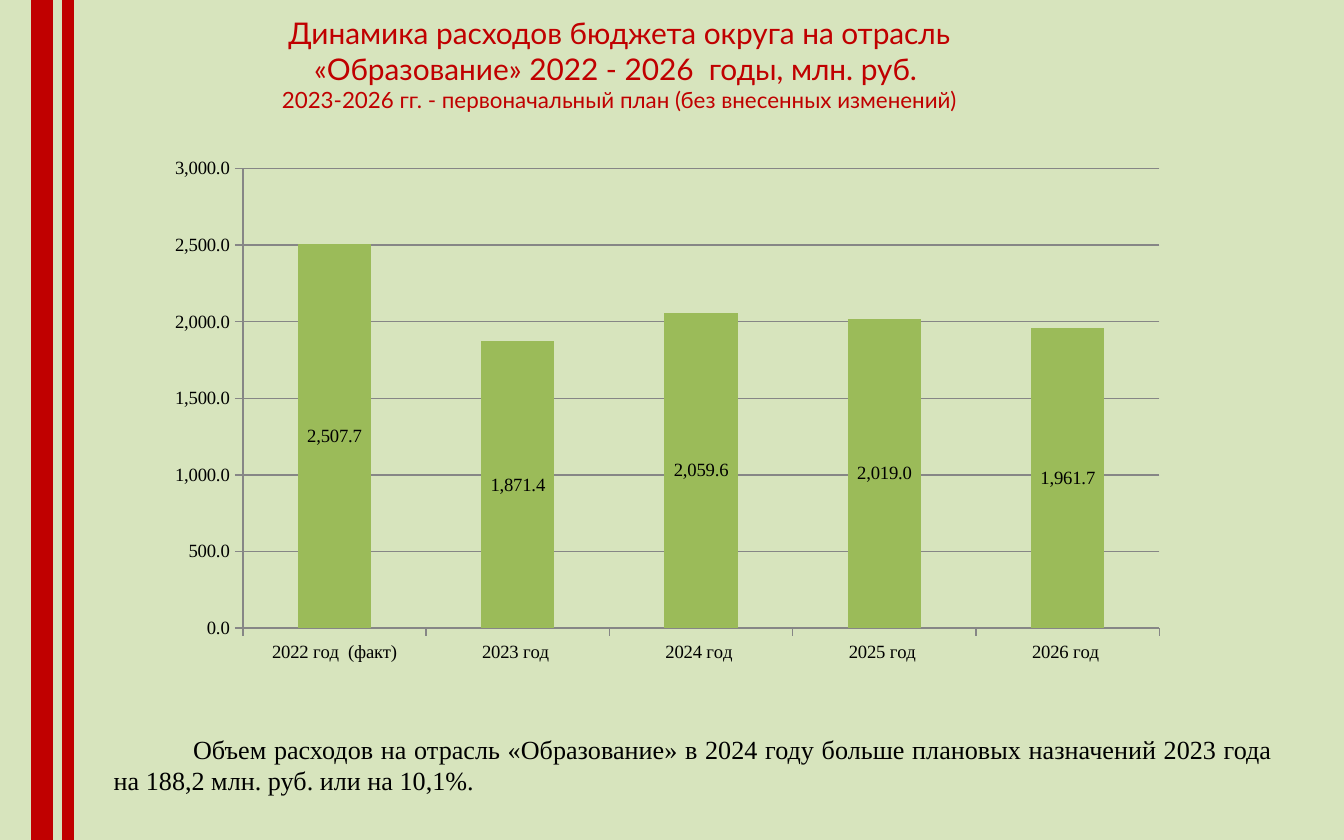
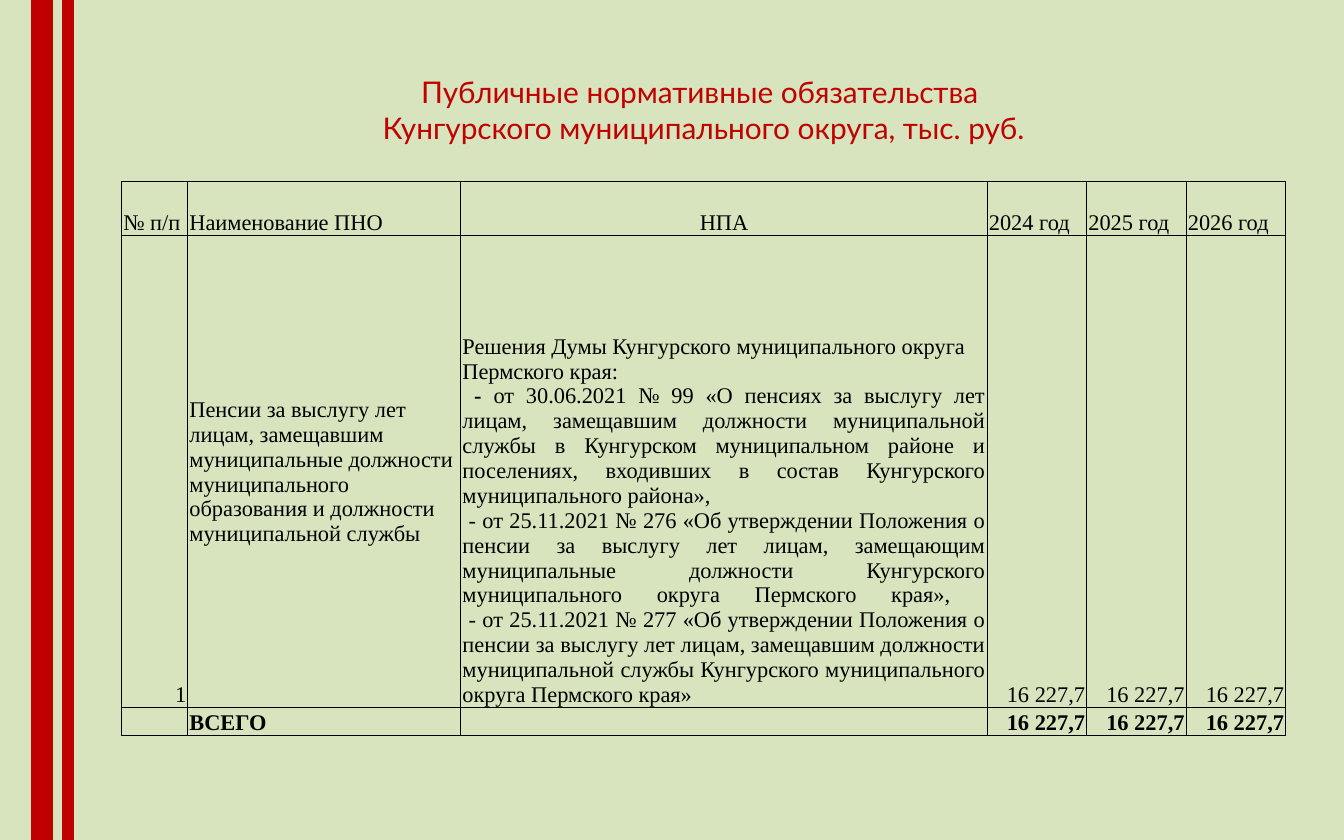
from lxml import etree
from pptx import Presentation
from pptx.chart.data import CategoryChartData
from pptx.dml.color import RGBColor
from pptx.enum.chart import XL_CHART_TYPE, XL_LABEL_POSITION, XL_TICK_MARK
from pptx.enum.shapes import MSO_SHAPE
from pptx.enum.text import MSO_ANCHOR, PP_ALIGN
from pptx.oxml.ns import qn
from pptx.util import Cm, Pt

COLUMN_STACKED = XL_CHART_TYPE.COLUMN_STACKED
LABEL_CENTER = XL_LABEL_POSITION.CENTER
TICK_OUTSIDE = XL_TICK_MARK.OUTSIDE
RECTANGLE = MSO_SHAPE.RECTANGLE
TOP, MIDDLE, BOTTOM = MSO_ANCHOR.TOP, MSO_ANCHOR.MIDDLE, MSO_ANCHOR.BOTTOM
LEFT, CENTER = PP_ALIGN.LEFT, PP_ALIGN.CENTER
RIGHT, JUSTIFY = PP_ALIGN.RIGHT, PP_ALIGN.JUSTIFY

COLORS = {name: RGBColor.from_string(value) for name, value in {
    "background": "D7E4BD", "red": "C00000", "bar": "9BBB59",
    "grid": "868686", "black": "000000"}.items()}
TITLE_FONT = "Lato"
BODY_FONT = "Times New Roman"
HEIGHT = 15.88


def write(frame, paragraphs, font, color):
    """Each paragraph is (alignment, [(text, size, bold), ...]); a newline is a line break."""
    for number, (alignment, spans) in enumerate(paragraphs):
        para = frame.paragraphs[0] if number == 0 else frame.add_paragraph()
        para.alignment = alignment
        for text, size, bold in spans:
            for row, line in enumerate(text.split("\n")):
                if row:
                    para.add_line_break()
                span = para.add_run()
                span.text = line
                span.font.name = font
                span.font.size = Pt(size)
                span.font.bold = bold
                span.font.color.rgb = COLORS[color]


def add_text(page, place, paragraphs, font, color, anchor=TOP):
    box = page.shapes.add_textbox(*[Cm(length) for length in place])
    box.text_frame.word_wrap = True
    box.text_frame.vertical_anchor = anchor
    write(box.text_frame, paragraphs, font, color)
    return box


# Deck with the shared background and red bands
deck = Presentation()
deck.slide_width, deck.slide_height = Cm(25.4), Cm(HEIGHT)
deck.slide_master.background.fill.solid()
deck.slide_master.background.fill.fore_color.rgb = COLORS["background"]

pages = [deck.slides.add_slide(deck.slide_layouts[6]) for _ in range(2)]
for page in pages:
    for left, width in ((1.19, 0.2), (0.6, 0.4)):
        band = page.shapes.add_shape(RECTANGLE, Cm(left), 0, Cm(width), Cm(HEIGHT))
        band.shadow.inherit = False
        band.fill.solid()
        band.fill.fore_color.rgb = COLORS["red"]
        band.line.color.rgb = COLORS["red"]
        band.line.width = Pt(0.75)
chart_page, table_page = pages

# Slide 1: chart of education spending
data = CategoryChartData(number_format="#,##0.0")
data.categories = ["2022 год  (факт)", "2023 год ", "2024 год ", "2025 год ", "2026 год "]
data.add_series("Расходы", (2507.7, 1871.4, 2059.6, 2019.0, 1961.7))
chart = chart_page.shapes.add_chart(
    COLUMN_STACKED, Cm(2.92), Cm(2.79), Cm(19.38), Cm(9.93), data).chart
chart.has_legend = False
chart.has_title = False
chart.font.name = BODY_FONT
chart.font.size = Pt(10)
chart.font.color.rgb = COLORS["black"]

plot = chart.plots[0]
plot.gap_width = 150
plot.overlap = 100
plot.vary_by_categories = False
bars = plot.series[0]
bars.format.fill.solid()
bars.format.fill.fore_color.rgb = COLORS["bar"]
plot.has_data_labels = True
labels = plot.data_labels
labels.show_value = True
labels.number_format = "#,##0.0"
labels.number_format_is_linked = False
labels.position = LABEL_CENTER

for axis in (chart.category_axis, chart.value_axis):
    axis.major_tick_mark = TICK_OUTSIDE
    axis.format.line.color.rgb = COLORS["grid"]
value_axis = chart.value_axis
value_axis.minimum_scale, value_axis.maximum_scale = 0, 3000
value_axis.major_unit = 500
value_axis.tick_labels.number_format = "#,##0.0"
value_axis.tick_labels.number_format_is_linked = False
value_axis.has_major_gridlines = True
value_axis.major_gridlines.format.line.color.rgb = COLORS["grid"]

# Slide 1: title and conclusion
add_text(chart_page, (3.91, 0.15, 15.6, 2.13), [
    (CENTER, [(" Динамика расходов бюджета округа на отрасль \n"
               "«Образование» 2022 - 2026  годы, млн. руб. ", 16, False)]),
    (CENTER, [("2023-2026 гг. - первоначальный план (без внесенных изменений)", 12, False)]),
], TITLE_FONT, "red", MIDDLE)
conclusion = add_text(chart_page, (1.9, 13.74, 22.4, 1.45), [
    (JUSTIFY, [("Объем расходов на отрасль «Образование» в 2024 году больше плановых "
                "назначений 2023 года на 188,2 млн. руб. или на 10,1%. ", 14, False)]),
], BODY_FONT, "black")
conclusion.text_frame.paragraphs[0]._p.get_or_add_pPr().set("indent", str(Cm(1.5)))

# Slide 2: title
add_text(table_page, (3.1, 1.27, 20.4, 1.63), [
    (CENTER, [("Публичные нормативные обязательства ", 16, False)]),
    (CENTER, [("Кунгурского муниципального округа, тыс. руб.", 16, False)]),
], TITLE_FONT, "red")

# Slide 2: table contents
YEARS = ("2024 год", "2025 год", "2026 год")
AMOUNT = "16 227,7"
decisions = [
    (LEFT, [("Решения Думы Кунгурского муниципального округа Пермского края:", 12, False)]),
    (JUSTIFY, [
        (" - ", 12, True),
        ("от 30.06.2021 № 99 «О пенсиях за выслугу лет лицам, замещавшим должности "
         "муниципальной службы в Кунгурском муниципальном районе и поселениях, "
         "входивших в состав Кунгурского муниципального района»,", 12, False)]),
    (JUSTIFY, [
        (" - от 25.11.2021 № 276 «Об утверждении Положения о пенсии за выслугу лет "
         "лицам, замещающим муниципальные должности Кунгурского муниципального "
         "округа Пермского края», \n"
         " - от 25.11.2021 № 277 «Об утверждении Положения о пенсии за выслугу лет "
         "лицам, замещавшим должности муниципальной службы Кунгурского "
         "муниципального округа Пермского края»", 12, False)]),
]
pension = ("Пенсии за выслугу лет лицам, замещавшим муниципальные должности "
           "муниципального образования и должности муниципальной службы")
rows = [
    [(LEFT, "№ п/п"), (LEFT, "Наименование ПНО"), (CENTER, "НПА")]
    + [(LEFT, year) for year in YEARS],
    [(RIGHT, "1"), (LEFT, pension), decisions] + [(RIGHT, AMOUNT)] * 3,
    [None, (LEFT, "ВСЕГО"), None] + [(RIGHT, AMOUNT)] * 3,
]
column_widths = (1.25, 5.16, 9.95, 1.88, 1.88, 1.88)
row_heights = (1.02, 8.92, 0.53)

# Slide 2: table
table = table_page.shapes.add_table(
    len(rows), len(column_widths), Cm(2.3), Cm(3.43),
    Cm(sum(column_widths)), Cm(sum(row_heights))).table
table.first_row = False
table.horz_banding = False
for column, width in zip(table.columns, column_widths):
    column.width = Cm(width)
for row, height in zip(table.rows, row_heights):
    row.height = Cm(height)

for row_number, row in enumerate(rows):
    for column_number, content in enumerate(row):
        cell = table.cell(row_number, column_number)
        cell.fill.background()
        cell.margin_left = cell.margin_right = cell.margin_top = Cm(0.03)
        cell.margin_bottom = 0
        cell.vertical_anchor = MIDDLE if content == (LEFT, pension) else BOTTOM
        if content is None:
            end = cell.text_frame.paragraphs[0]._p.get_or_add_endParaRPr()
            end.set("sz", "1200")
        elif isinstance(content, list):
            write(cell.text_frame, content, BODY_FONT, "black")
        else:
            alignment, text = content
            is_total = row_number == len(rows) - 1
            write(cell.text_frame, [(alignment, [(text, 12, is_total)])], BODY_FONT, "black")

        # Thin black border on every side
        properties = cell._tc.get_or_add_tcPr()
        for position, side in enumerate(("a:lnL", "a:lnR", "a:lnT", "a:lnB")):
            border = etree.Element(qn(side), w=str(Pt(0.5)))
            fill = etree.SubElement(border, qn("a:solidFill"))
            etree.SubElement(fill, qn("a:srgbClr"), val=str(COLORS["black"]))
            properties.insert(position, border)

deck.save("out.pptx")
